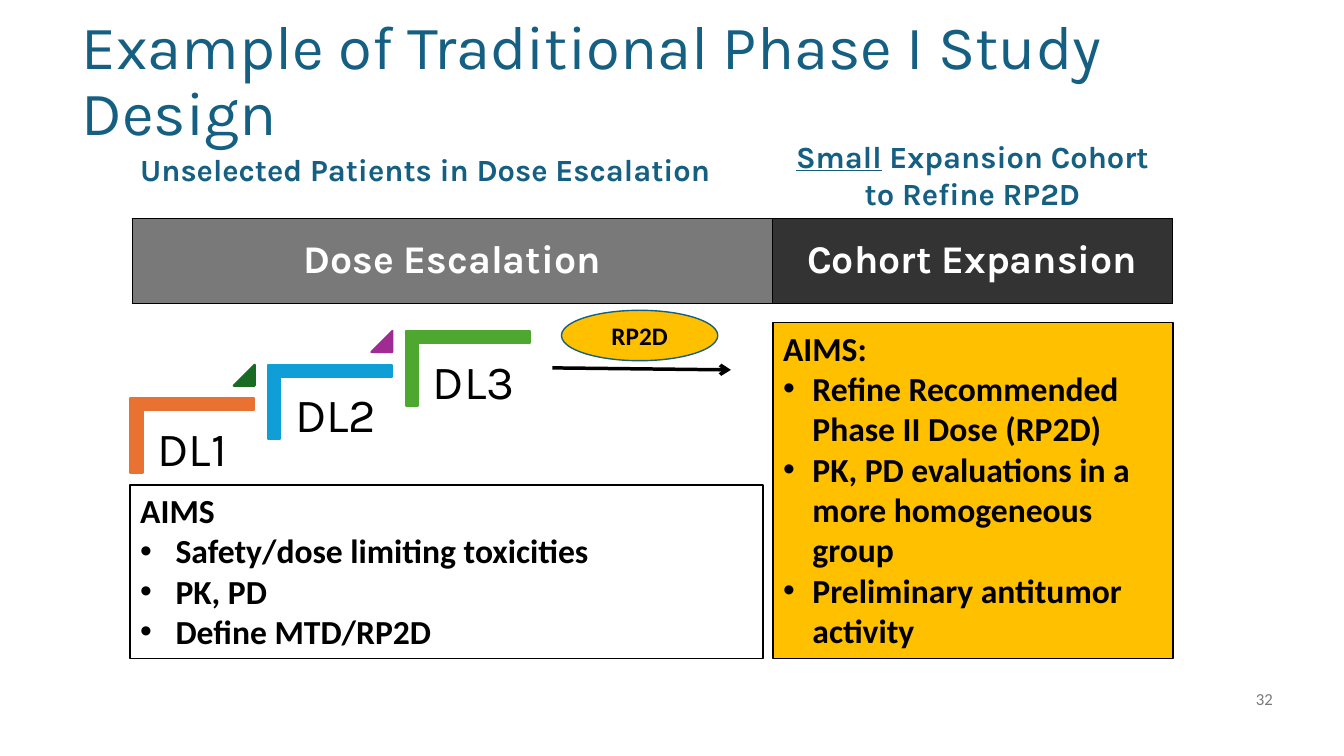
from lxml import etree
from pptx import Presentation
from pptx.dml.color import RGBColor
from pptx.enum.shapes import MSO_CONNECTOR, MSO_SHAPE
from pptx.enum.text import MSO_ANCHOR, MSO_AUTO_SIZE, PP_ALIGN
from pptx.oxml.ns import qn
from pptx.util import Cm, Pt

LEFT, CENTER, RIGHT = PP_ALIGN.LEFT, PP_ALIGN.CENTER, PP_ALIGN.RIGHT
TOP, MIDDLE = MSO_ANCHOR.TOP, MSO_ANCHOR.MIDDLE
FIXED = MSO_AUTO_SIZE.NONE
OVAL, CORNER, WEDGE = MSO_SHAPE.OVAL, MSO_SHAPE.CORNER, MSO_SHAPE.RIGHT_TRIANGLE
PEAK = MSO_SHAPE.ISOSCELES_TRIANGLE
STRAIGHT = MSO_CONNECTOR.STRAIGHT

TEAL = RGBColor(0x15, 0x60, 0x82)
BLACK = RGBColor(0, 0, 0)
WHITE = RGBColor(0xFF, 0xFF, 0xFF)
GRAY = RGBColor(0x79, 0x79, 0x79)
DARK = RGBColor(0x33, 0x33, 0x33)
GOLD = RGBColor(0xFF, 0xC0, 0x00)
ORANGE = RGBColor(0xE9, 0x71, 0x32)
BLUE = RGBColor(0x0F, 0x9E, 0xD5)
LIME = RGBColor(0x4E, 0xA7, 0x2E)
GREEN = RGBColor(0x19, 0x6B, 0x24)
PURPLE = RGBColor(0xA0, 0x2B, 0x93)


def style(frame, size, font, color, bold=False, align=LEFT, anchor=TOP):
    frame.word_wrap = True
    frame.auto_size = FIXED
    frame.vertical_anchor = anchor
    for para in frame.paragraphs:
        para.alignment = align
        for run in para.runs:
            run.font.size = Pt(size)
            run.font.name = font
            run.font.bold = bold
            run.font.color.rgb = color


def place(shape, box):
    shape.left, shape.top, shape.width, shape.height = map(Cm, box)


def paint(shape, fill, line, width):
    if fill is None:
        shape.fill.background()
    else:
        shape.fill.solid()
        shape.fill.fore_color.rgb = fill
    shape.line.color.rgb = line
    shape.line.width = Pt(width)
    shape.shadow.inherit = False


def add_form(slide, kind, box, fill, line, width):
    shape = slide.shapes.add_shape(kind, *map(Cm, box))
    paint(shape, fill, line, width)
    return shape


def add_text(slide, box, text, *look, **more):
    frame = slide.shapes.add_textbox(*map(Cm, box)).text_frame
    frame.text = text
    style(frame, *look, **more)
    return frame


def fill_list(holder, box, head, items, indent, fill):
    place(holder, box)
    paint(holder, fill, BLACK, 1)
    frame = holder.text_frame
    frame.text = "\n".join([head] + items)
    style(frame, 24, "Calibri", BLACK, bold=True)
    for i, para in enumerate(frame.paragraphs):
        para.space_before = Pt(0)
        props = para._p.get_or_add_pPr()
        gap = Cm(indent) if i else 0
        props.set("marL", str(gap))
        props.set("indent", str(-gap))
        if i:
            etree.SubElement(props, qn("a:buChar")).set("char", "•")
        else:
            etree.SubElement(props, qn("a:buNone"))


def add_border(cell):
    props = cell._tc.get_or_add_tcPr()
    for side in ("lnL", "lnR", "lnT", "lnB"):
        line = etree.SubElement(props, qn("a:" + side), w=str(Pt(1)))
        fill = etree.SubElement(line, qn("a:solidFill"))
        etree.SubElement(fill, qn("a:srgbClr"), val=str(BLACK))


def add_phases(slide):
    phases = [("Dose Escalation", 16.13, GRAY), ("Cohort Expansion", 10.08, DARK)]
    box = map(Cm, (3.33, 5.51, 26.21, 2.13))
    table = slide.shapes.add_table(1, len(phases), *box).table
    for i, (text, width, fill) in enumerate(phases):
        table.columns[i].width = Cm(width)
        cell = table.cell(0, i)
        add_border(cell)
        cell.fill.solid()
        cell.fill.fore_color.rgb = fill
        cell.margin_left = cell.margin_right = Cm(0.18)
        cell.margin_top = cell.margin_bottom = Cm(0.1)
        cell.vertical_anchor = MIDDLE
        cell.text = text
        style(cell.text_frame, 28, "Karla", WHITE, True, CENTER)


def add_arrow(slide, ends):
    arrow = slide.shapes.add_connector(STRAIGHT, *map(Cm, ends))
    arrow.line.color.rgb = BLACK
    arrow.line.width = Pt(2.5)
    line = arrow.line._get_or_add_ln()
    etree.SubElement(line, qn("a:tailEnd")).set("type", "arrow")
    etree.SubElement(arrow._element.spPr, qn("a:effectLst"))


def add_step(slide, i, color, peak):
    x, y = 3.47 * i, -0.85 * i
    form = add_form(slide, CORNER, (3.91 + x, 9.42 + y, 1.88, 3.12), color, color, 1.5)
    form.rotation = 90
    form.adjustments[0] = form.adjustments[1] = 0.16
    frame = add_text(slide, (3.61 + x, 10.36 + y, 2.82, 2.49), f"DL{i + 1}",
                     34, "Karla", BLACK)
    frame.margin_left = frame.margin_right = Cm(0.36)
    frame.margin_top = frame.margin_bottom = Cm(0.36)
    frame.paragraphs[0].line_spacing = 0.9
    if peak:
        mark = add_form(slide, PEAK, (5.89 + x, 9.19 + y, 0.53, 0.53), peak, peak, 1.5)
        mark.adjustments[0] = 1


def main():
    deck = Presentation()
    deck.slide_width, deck.slide_height = Cm(33.87), Cm(19.05)
    slide = deck.slides.add_slide(deck.slide_layouts[3])
    title, aims, goals = slide.placeholders

    place(title, (1.8, 0.61, 30, 2.95))
    title.text_frame.text = "Example of Traditional Phase I Study Design"
    style(title.text_frame, 44, "Karla", TEAL, anchor=MIDDLE)
    title.text_frame.paragraphs[0].line_spacing = 0.9

    add_phases(slide)
    fill_list(aims, (3.28, 12.22, 15.95, 4.37), "AIMS",
              ["Safety/dose limiting toxicities", "PK, PD", "Define MTD/RP2D"],
              0.89, None)
    fill_list(goals, (19.48, 8.13, 10.08, 8.46), "AIMS:",
              ["Refine Recommended Phase II Dose (RP2D)",
               "PK, PD evaluations in a more homogeneous group",
               "Preliminary antitumor activity"], 0.74, GOLD)

    add_arrow(slide, (13.92, 9.27, 18.42, 9.32))
    oval = add_form(slide, OVAL, (14.15, 7.82, 3.94, 1.27), GOLD, TEAL, 1)
    oval.text_frame.text = "RP2D"
    style(oval.text_frame, 18, "Calibri", BLACK, True, CENTER, MIDDLE)

    add_text(slide, (24.71, 17.09, 7.62, 1.02), "32", 12, "Calibri", GRAY,
             align=RIGHT, anchor=MIDDLE)
    head = (22, "Karla", TEAL, True, CENTER)
    add_text(slide, (2.74, 3.68, 15.95, 1.19),
             "Unselected Patients in Dose Escalation", *head)
    frame = add_text(slide, (19.63, 3.35, 9.75, 2.13), "Small", *head)
    frame.paragraphs[0].runs[0].font.underline = True
    frame.paragraphs[0].add_run().text = " Expansion Cohort to Refine RP2D"
    style(frame, *head)

    steps = [(ORANGE, GREEN), (BLUE, PURPLE), (LIME, None)]
    for i, (color, peak) in enumerate(steps):
        add_step(slide, i, color, peak)

    deck.save("out.pptx")


if __name__ == "__main__":
    main()
